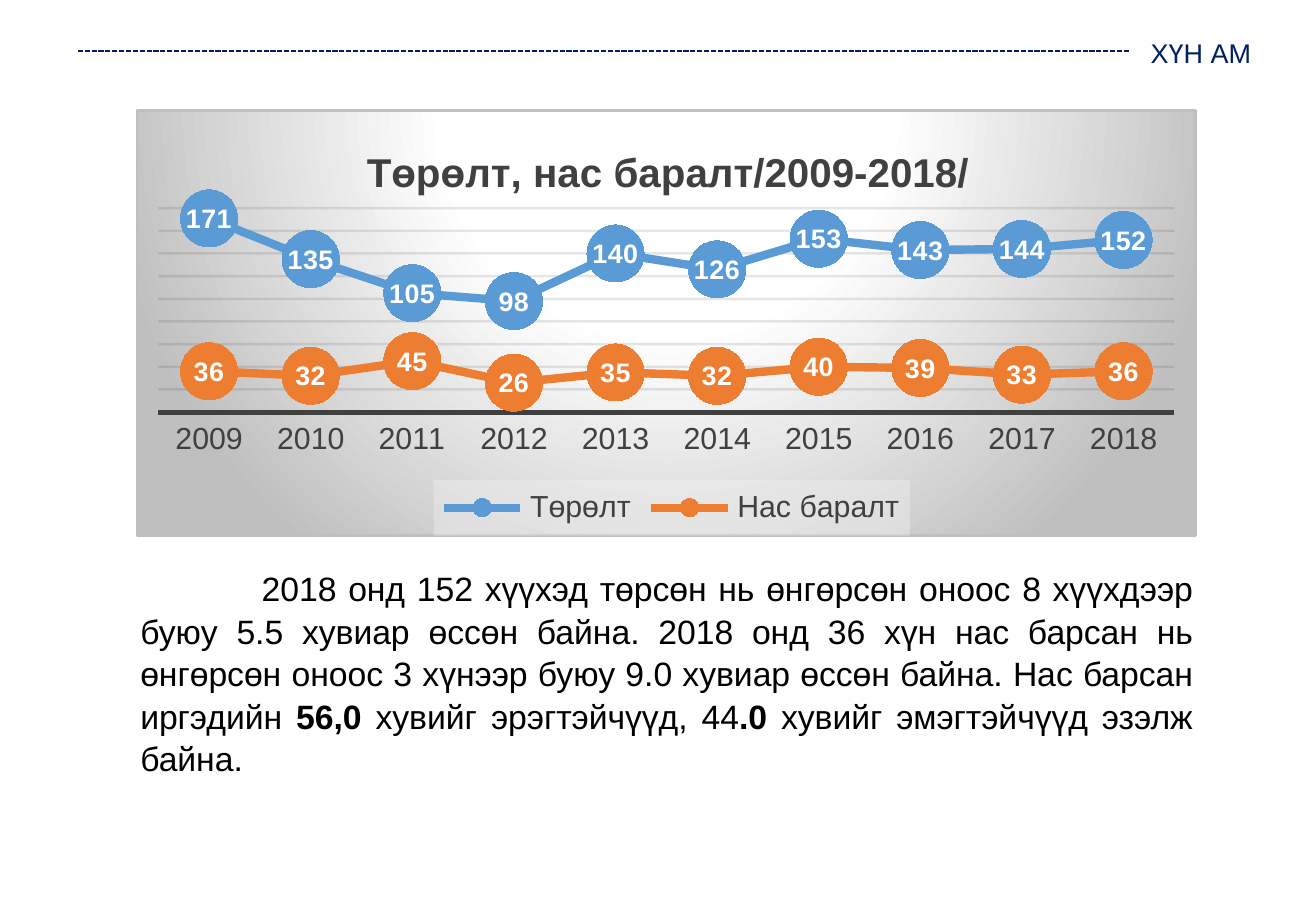
from lxml import etree
from pptx import Presentation
from pptx import util as u
from pptx.chart import data
from pptx.dml import color
from pptx.enum import chart as charts, dml, shapes, text
from pptx.oxml import ns, parse_xml

YEARS = [str(year) for year in range(2009, 2019)]
SERIES = [
    ("Төрөлт", "5B9BD5", [171, 135, 105, 98, 140, 126, 153, 143, 144, 152]),
    ("Нас баралт", "ED7D31", [36, 32, 45, 26, 35, 32, 40, 39, 33, 36]),
]
SUMMARY = [
    ("2018 онд 152 хүүхэд төрсөн нь өнгөрсөн оноос 8 хүүхдээр буюу 5.5 хувиар "
     "өссөн байна. 2018 онд 36 хүн нас барсан нь өнгөрсөн оноос 3 хүнээр буюу "
     "9.0 хувиар өссөн байна. Нас барсан иргэдийн ", False),
    ("56,0 ", True),
    ("хувийг эрэгтэйчүүд, 44", False),
    (".0 ", True),
    ("хувийг эмэгтэйчүүд эзэлж байна.", False),
]


def rgb(value):
    return color.RGBColor.from_string(value)


class PopulationSlide:
    """Styles and draws a slide on a grid of tenth-inch columns and rows."""

    FONT = "Arial"
    NAVY, DARK, GREY, WHITE, BLACK = "002060", "404040", "BFBFBF", "FFFFFF", "000000"
    CELL = u.Inches(0.1)

    def __init__(self, columns, rows):
        self.presentation = Presentation()
        self.presentation.slide_width = self.cells(columns)
        self.presentation.slide_height = self.cells(rows)
        self.slide = self.presentation.slides.add_slide(self.presentation.slide_layouts[6])

    def cells(self, count):
        return round(count * self.CELL)

    def style_font(self, font, size, colour, bold=False):
        font.name, font.size, font.bold = self.FONT, u.Pt(size), bold
        font.color.rgb = rgb(colour)

    def style_line(self, line, width, colour):
        line.color.rgb = rgb(colour)
        line.width = u.Pt(width)

    def style_fill(self, fill, colour):
        fill.solid()
        fill.fore_color.rgb = rgb(colour)

    def set_opacity(self, element, percent):
        for colour in element.iter(ns.qn("a:srgbClr")):
            etree.SubElement(colour, ns.qn("a:alpha"), val=str(percent * 1000))

    def set_layout(self, element, **shares):
        layout = element.find(ns.qn("c:layout"))
        if layout is None:
            layout = etree.Element(ns.qn("c:layout"))
            overlay = element.find(ns.qn("c:overlay"))
            if overlay is None:
                element.insert(0, layout)
            else:
                overlay.addprevious(layout)
        for child in list(layout):
            layout.remove(child)
        manual = etree.SubElement(layout, ns.qn("c:manualLayout"))
        if "w" in shares and element.tag == ns.qn("c:plotArea"):
            etree.SubElement(manual, ns.qn("c:layoutTarget"), val="inner")
        for side in "xy":
            etree.SubElement(manual, ns.qn(f"c:{side}Mode"), val="edge")
        for side, share in shares.items():
            etree.SubElement(manual, ns.qn(f"c:{side}"), val=str(share))

    def add_text(self, box, runs, size, colour, justified=False):
        shape = self.slide.shapes.add_textbox(*map(self.cells, box))
        frame = shape.text_frame
        frame.word_wrap = justified
        paragraph = frame.paragraphs[0]
        if justified:
            paragraph.alignment = text.PP_ALIGN.JUSTIFY
            paragraph.line_spacing = 1.05
            paragraph._p.get_or_add_pPr().set("indent", str(self.cells(5)))
        for words, bold in runs:
            run = paragraph.add_run()
            run.text = words
            self.style_font(run.font, size, colour, bold)

    def add_dashed_line(self, start, end, row):
        rule = self.slide.shapes.add_connector(
            shapes.MSO_CONNECTOR.STRAIGHT, *map(self.cells, (start, row, end, row)))
        self.style_line(rule.line, 0.5, self.NAVY)
        rule.line.dash_style = dml.MSO_LINE.SQUARE_DOT
        etree.SubElement(rule._element.spPr, ns.qn("a:effectLst"))

    def add_line_chart(self, box, title, categories, series):
        values = data.CategoryChartData()
        values.categories = categories
        for name, _, numbers in series:
            values.add_series(name, numbers)
        chart = self.slide.shapes.add_chart(
            charts.XL_CHART_TYPE.LINE_MARKERS, *map(self.cells, box), values).chart
        self.style_font(chart.font, 10, self.BLACK)
        for line, (_, colour, _) in zip(chart.plots[0].series, series):
            self.style_series(line, colour)
        chart.plots[0].vary_by_categories = False
        self.style_axes(chart)
        self.style_title(chart, title)
        self.style_legend(chart)
        self.style_chart_area(chart)

    def style_series(self, series, colour):
        series.smooth = False
        self.style_line(series.format.line, 2.5, colour)
        series.marker.style = charts.XL_MARKER_STYLE.CIRCLE
        series.marker.size = 17
        self.style_fill(series.marker.format.fill, colour)
        series.marker.format.line.fill.background()
        labels = series.data_labels
        labels.show_value = True
        labels.position = charts.XL_LABEL_POSITION.CENTER
        self.style_font(labels.font, 8, self.WHITE, True)

    def style_axes(self, chart):
        years, counts = chart.category_axis, chart.value_axis
        years.major_tick_mark = charts.XL_TICK_MARK.NONE
        self.style_font(years.tick_labels.font, 9, self.DARK)
        self.style_line(years.format.line, 1.5, self.DARK)
        counts.minimum_scale, counts.maximum_scale, counts.major_unit = 0, 180, 20
        counts.visible = False
        counts.has_major_gridlines = True
        self.style_line(counts.major_gridlines.format.line, 0.75, "0D0D0D")
        self.set_opacity(counts._element.find(ns.qn("c:majorGridlines")), 10)

    def style_title(self, chart, words):
        chart.has_title = True
        paragraph = chart.chart_title.text_frame.paragraphs[0]
        paragraph.text = words
        self.style_font(paragraph.runs[0].font, 12, self.DARK, True)
        self.set_layout(chart.chart_title._element, x=0.21, y=0.07)

    def style_legend(self, chart):
        chart.has_legend = True
        legend = chart.legend
        legend.position = charts.XL_LEGEND_POSITION.BOTTOM
        legend.include_in_layout = False
        self.style_font(legend.font, 9, self.DARK)
        self.set_layout(legend._element, x=0.28, y=0.87, w=0.45, h=0.13)
        background = parse_xml(
            f'<c:spPr {ns.nsdecls("c", "a")}><a:solidFill><a:srgbClr val="F2F2F2"/>'
            '</a:solidFill></c:spPr>')
        self.set_opacity(background, 39)
        legend._element.find(ns.qn("c:txPr")).addprevious(background)

    def style_chart_area(self, chart):
        stops = "".join(
            f'<a:gs pos="{share * 1000}"><a:srgbClr val="{colour}"/></a:gs>'
            for share, colour in ((0, self.WHITE), (39, self.WHITE), (100, self.GREY)))
        area = parse_xml(
            f'<c:spPr {ns.nsdecls("c", "a")}><a:gradFill><a:gsLst>{stops}</a:gsLst>'
            '<a:path path="circle"><a:fillToRect l="50000" t="-80000" r="50000" '
            f'b="180000"/></a:path></a:gradFill><a:ln w="{u.Pt(0.75)}"><a:solidFill>'
            f'<a:srgbClr val="{self.GREY}"/></a:solidFill></a:ln></c:spPr>')
        chart_element = chart._chartSpace.find(ns.qn("c:chart"))
        chart_element.addnext(area)
        plot_area = chart_element.find(ns.qn("c:plotArea"))
        self.set_layout(plot_area, x=0.02, y=0.23, w=0.96, h=0.48)


def main():
    page = PopulationSlide(54.2, 37.5)
    page.add_text((4.8, 22.8, 45.3, 9.4), SUMMARY, 10, page.BLACK, justified=True)
    page.add_dashed_line(46.5, 3.2, 2.1)
    page.add_text((46.4, 1, 6.2, 2.4), [("ХҮН АМ", False)], 8, page.NAVY)
    page.add_line_chart((5.6, 4.5, 43.7, 17.6), "Төрөлт, нас баралт/2009-2018/", YEARS, SERIES)
    page.presentation.save("out.pptx")


if __name__ == "__main__":
    main()
